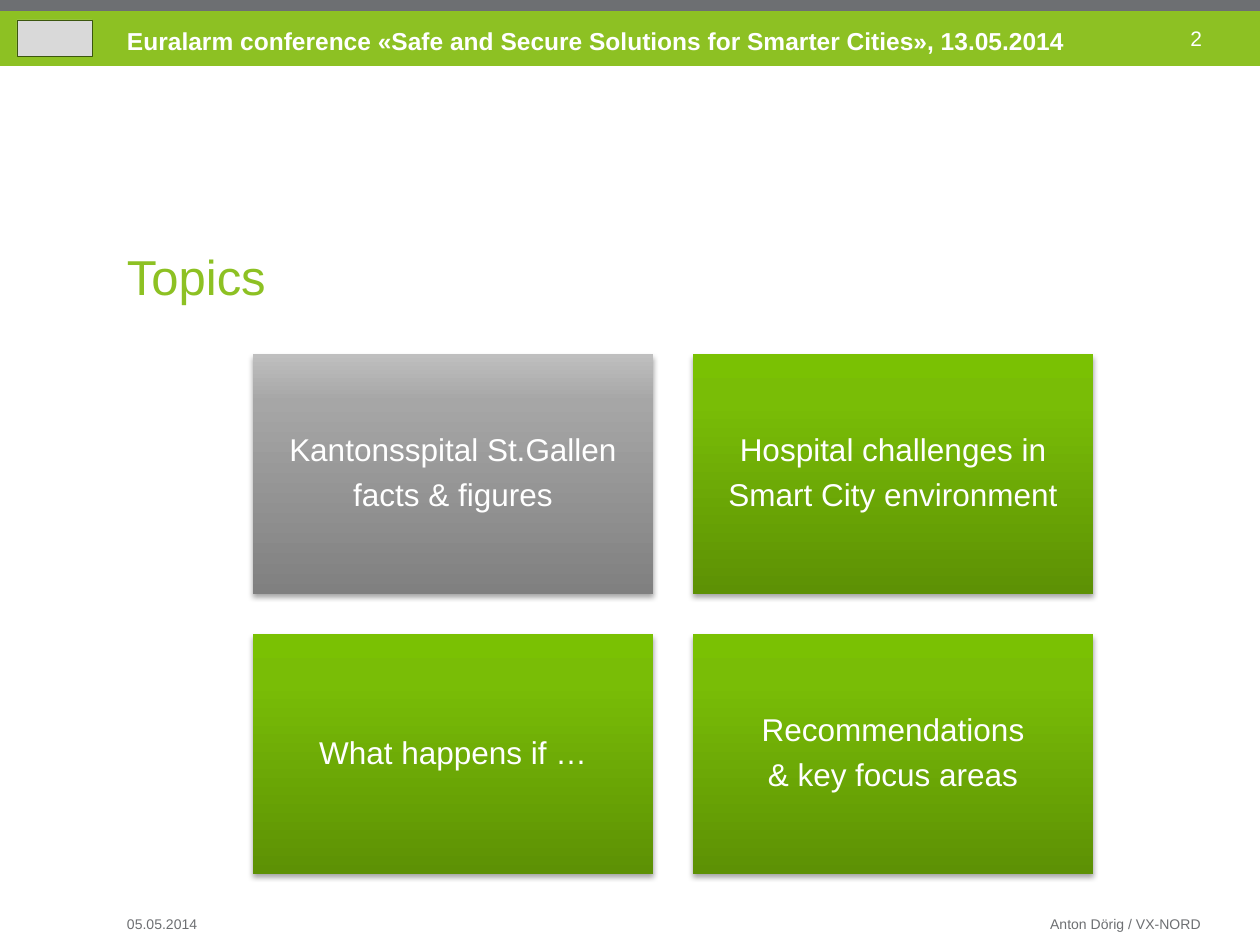
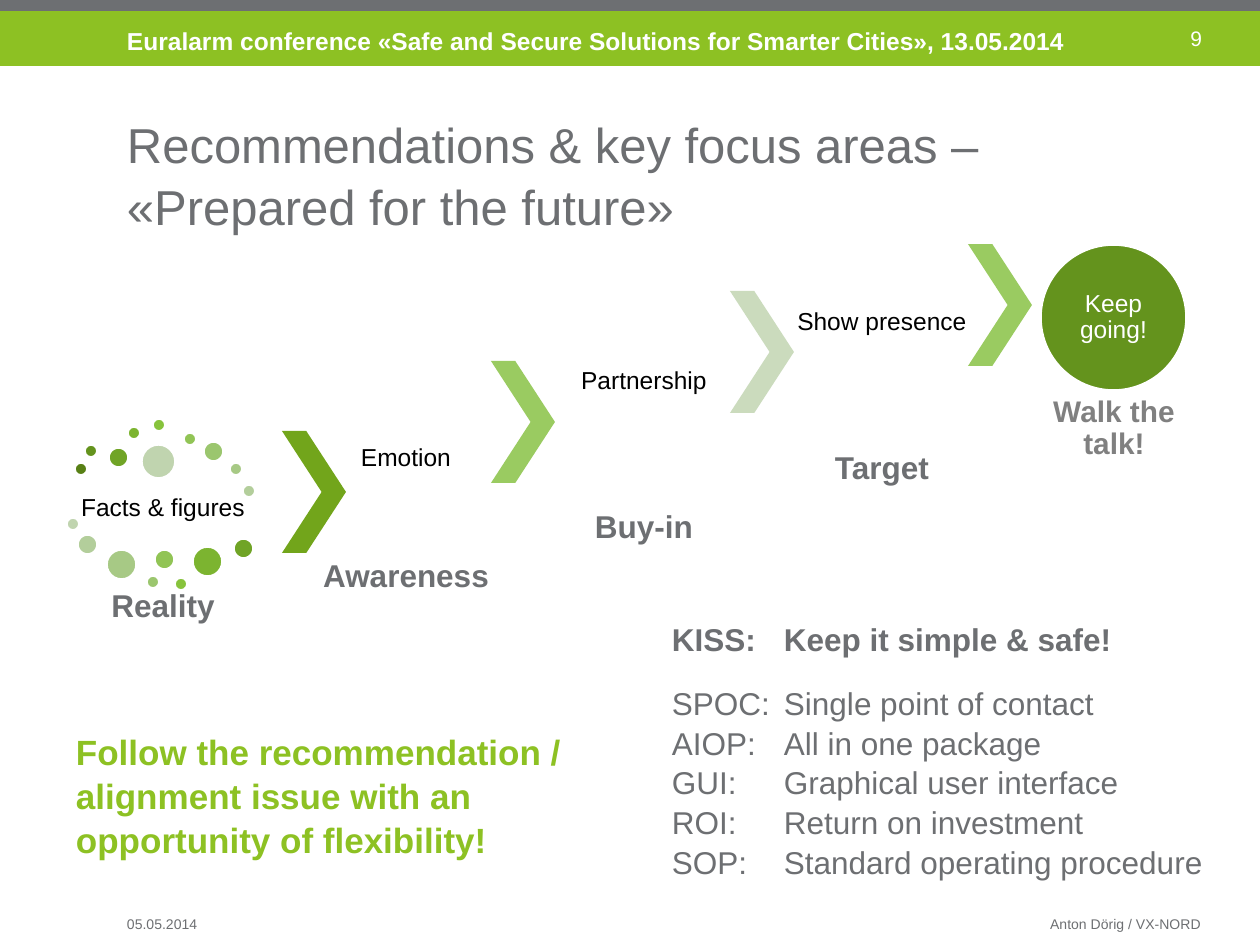
from dataclasses import dataclass

from lxml.etree import SubElement
from pptx import Presentation
from pptx.dml.color import RGBColor
from pptx.enum.shapes import MSO_SHAPE
from pptx.enum.text import MSO_ANCHOR, PP_ALIGN
from pptx.oxml.ns import qn
from pptx.util import Pt

EMU_PER_PX = 914400 / 126


@dataclass(frozen=True)
class Theme:
    font: str = "Arial"
    green: str = "8DC123"
    dark_green: str = "64931D"
    grey: str = "6D6F72"
    mid_grey: str = "808080"
    light_grey: str = "D9D9D9"
    white: str = "FFFFFF"
    black: str = "000000"
    badge_line: str = "3B560E"
    # Gradient stops from bottom to top
    green_tile: tuple = ((0, "5D9105"), (80, "79BD06"), (100, "7AC103"))
    grey_tile: tuple = ((0, "808080"), (80, "A6A6A6"), (100, "BFBFBF"))
    dots: tuple = ("588015", "64931D", "70A426", "7CB430", "87C33C",
                   "91C455", "9BC66E", "A7C985", "B3CE9B", "C0D4AF")
    title: int = 28
    callout: int = 20
    body: int = 18
    outcome: int = 17
    label: int = 14
    number: int = 12
    footer: int = 8


T = Theme()


def px(n):
    return round(n * EMU_PER_PX)


def rgb(value):
    return RGBColor.from_string(value)


# Basic elements
def write(sp, lines, size, color, bold=False, align=PP_ALIGN.LEFT,
          anchor=MSO_ANCHOR.TOP, inset=(0, 0), spacing=1.0, after=0, tab=None):
    tf = sp.text_frame
    tf.word_wrap = True
    tf.vertical_anchor = anchor
    tf.margin_left = tf.margin_right = px(inset[0])
    tf.margin_top = tf.margin_bottom = px(inset[1])
    for i, line in enumerate(lines):
        p = tf.add_paragraph() if i else tf.paragraphs[0]
        p.text = line
        p.alignment = align
        p.line_spacing = spacing
        p.space_after = Pt(after)
        if tab:
            tabs = SubElement(p._p.get_or_add_pPr(), qn("a:tabLst"))
            SubElement(tabs, qn("a:tab"), pos=str(px(tab)), algn="l")
        p.font.name = T.font
        p.font.size = Pt(size)
        p.font.bold = bold
        p.font.color.rgb = rgb(color)
    return tf


def add_text(s, box, lines, size, color, **style):
    sp = s.shapes.add_textbox(*map(px, box))
    return write(sp, lines, size, color, **style)


def write_centred(sp, lines, size, color, inset=0, bold=False):
    write(sp, lines, size, color, bold=bold, align=PP_ALIGN.CENTER,
          anchor=MSO_ANCHOR.MIDDLE, inset=(inset, inset), spacing=0.9,
          after=round(size * 0.35, 1))


def add_label(s, box, text, size, color, **style):
    write_centred(s.shapes.add_textbox(*map(px, box)), [text], size, color, **style)


def add_shape(s, kind, box, fill=None, line=None, width=2):
    sp = s.shapes.add_shape(kind, *map(px, box))
    sp.shadow.inherit = False
    if fill:
        sp.fill.solid()
        sp.fill.fore_color.rgb = rgb(fill)
    if line:
        sp.line.color.rgb = rgb(line)
        sp.line.width = Pt(width)
    else:
        sp.line.fill.background()
    return sp


def add_tile(s, box, lines, stops):
    sp = add_shape(s, MSO_SHAPE.RECTANGLE, box)
    sp.fill.gradient()
    sp.fill.gradient_angle = 90
    spPr = sp._element.spPr
    gs_list = spPr.find(qn("a:gradFill")).find(qn("a:gsLst"))
    for gs in list(gs_list):
        gs_list.remove(gs)
    for pos, color in stops:
        gs = SubElement(gs_list, qn("a:gs"), pos=str(pos * 1000))
        SubElement(gs, qn("a:srgbClr"), val=color)
    shadow = SubElement(spPr.find(qn("a:effectLst")), qn("a:outerShdw"),
                        blurRad=str(Pt(3)), dist=str(Pt(2)), dir="5400000",
                        rotWithShape="0")
    black = SubElement(shadow, qn("a:srgbClr"), val=T.black)
    SubElement(black, qn("a:alpha"), val="35000")
    write_centred(sp, lines, T.body, T.white, inset=9)


def add_chevron(s, left, top, color):
    sp = add_shape(s, MSO_SHAPE.CHEVRON, (left, top, 64, 122), color)
    sp.adjustments[0] = 0.62


def add_dots(s, dots, colors):
    for (left, top, size), color in zip(dots, colors):
        add_shape(s, MSO_SHAPE.OVAL, (left, top, size, size), color, T.white)


# Bands, title and footer shared by the slides
def add_frame(prs, number, title, title_top, title_color):
    s = prs.slides.add_slide(prs.slide_layouts[6])
    add_shape(s, MSO_SHAPE.RECTANGLE, (0, 11, 1260, 55), T.green)
    add_shape(s, MSO_SHAPE.RECTANGLE, (0, 0, 1260, 11), T.grey)
    add_text(s, (127, 25, 999, 30),
             ["Euralarm conference «Safe and Secure Solutions for Smarter Cities», 13.05.2014"],
             T.label, T.white, bold=True, spacing=1.05)
    add_text(s, (115, title_top, 1089, 175), [title], T.title, title_color,
             inset=(12, 6), spacing=1.05)
    add_text(s, (1076, 21, 126, 35), [number], T.number, T.white,
             align=PP_ALIGN.RIGHT, anchor=MSO_ANCHOR.MIDDLE)
    add_text(s, (127, 898, 248, 34), ["05.05.2014"], T.footer, T.grey,
             anchor=MSO_ANCHOR.BOTTOM)
    add_text(s, (903, 898, 298, 34), ["Anton Dörig / VX-NORD"], T.footer, T.grey,
             align=PP_ALIGN.RIGHT, anchor=MSO_ANCHOR.BOTTOM)
    return s


def add_topics(prs):
    s = add_frame(prs, "2", "Topics", 238, T.green)
    topics = [["Kantonsspital St.Gallen", "facts & figures"],
              ["Hospital challenges in", "Smart City environment"],
              ["What happens if …"],
              ["Recommendations", "& key focus areas"]]
    # Two by two grid, the first topic greyed
    for i, lines in enumerate(topics):
        row, col = divmod(i, 2)
        add_tile(s, (253 + 440 * col, 354 + 280 * row, 400, 240), lines,
                 T.green_tile if i else T.grey_tile)
    # Plain badge
    add_shape(s, MSO_SHAPE.RECTANGLE, (17, 20, 75, 36), T.light_grey,
              T.badge_line, 0.25)


def add_recommendations(prs):
    s = add_frame(prs, "9", "Recommendations & key focus areas –\v«Prepared for the future»",
                  106, T.grey)

    # Cloud of dots around the first step
    upper = [(74, 462, 14), (84, 444, 14), (108, 447, 21), (127, 426, 14),
             (152, 418, 14), (183, 432, 14), (203, 441, 21), (229, 462, 14),
             (242, 484, 14), (141, 444, 35)]
    lower = [(66, 517, 14), (77, 534, 21), (106, 549, 31), (146, 575, 14),
             (154, 549, 21), (174, 577, 14), (192, 546, 31), (233, 538, 21)]
    add_dots(s, upper, T.dots)
    add_dots(s, lower, reversed(T.dots))

    # Rising steps: left, label, its top and height, stage, its top and height
    steps = [(76, "Facts & figures", 480, 57, "Reality", 583, 48),
             (319, "Emotion", 398, 122, "Awareness", 524, 107),
             (557, "Partnership", 321, 122, "Buy-in", 475, 107),
             (795, "Show presence", 262, 122, "Target", 416, 107)]
    for left, label, top, height, stage, stage_top, stage_height in steps:
        add_label(s, (left, top, 174, height), label, T.label, T.black, inset=2)
        add_label(s, (left, stage_top, 174, stage_height), stage, T.body, T.grey,
                  inset=4, bold=True)
    for chevron in [(282, 431, "72A51B"), (491, 361, "9ACB61"),
                    (730, 291, "CBDBBD"), (968, 244, "9ACB61")]:
        add_chevron(s, *chevron)

    # Goal
    goal = add_shape(s, MSO_SHAPE.OVAL, (1040, 244, 147, 147), T.dark_green, T.white)
    write_centred(goal, ["Keep going!"], T.label, T.white)
    add_label(s, (1027, 375, 174, 107), "Walk the talk!", T.outcome, T.mid_grey,
              inset=4, bold=True)

    # Abbreviations and conclusion
    terms = [("KISS", "Keep it simple & safe!"),
             ("SPOC", "Single point of contact"),
             ("AIOP", "All in one package"),
             ("GUI", "Graphical user interface"),
             ("ROI", "Return on investment"),
             ("SOP", "Standard operating procedure")]
    tf = add_text(s, (660, 612, 557, 267), [f"{key}:\t{text}" for key, text in terms],
                  T.body, T.grey, inset=(12, 6), spacing=1.05, tab=112)
    tf.paragraphs[0].font.bold = True
    tf.paragraphs[1].space_before = Pt(14)
    add_text(s, (64, 722, 595, 183),
             ["Follow the recommendation / alignment issue with an\vopportunity of flexibility!"],
             T.callout, T.green, bold=True, inset=(12, 6), spacing=1.05)


def main():
    prs = Presentation()
    prs.slide_width, prs.slide_height = px(1260), px(945)
    add_topics(prs)
    add_recommendations(prs)
    prs.save("out.pptx")


if __name__ == "__main__":
    main()
